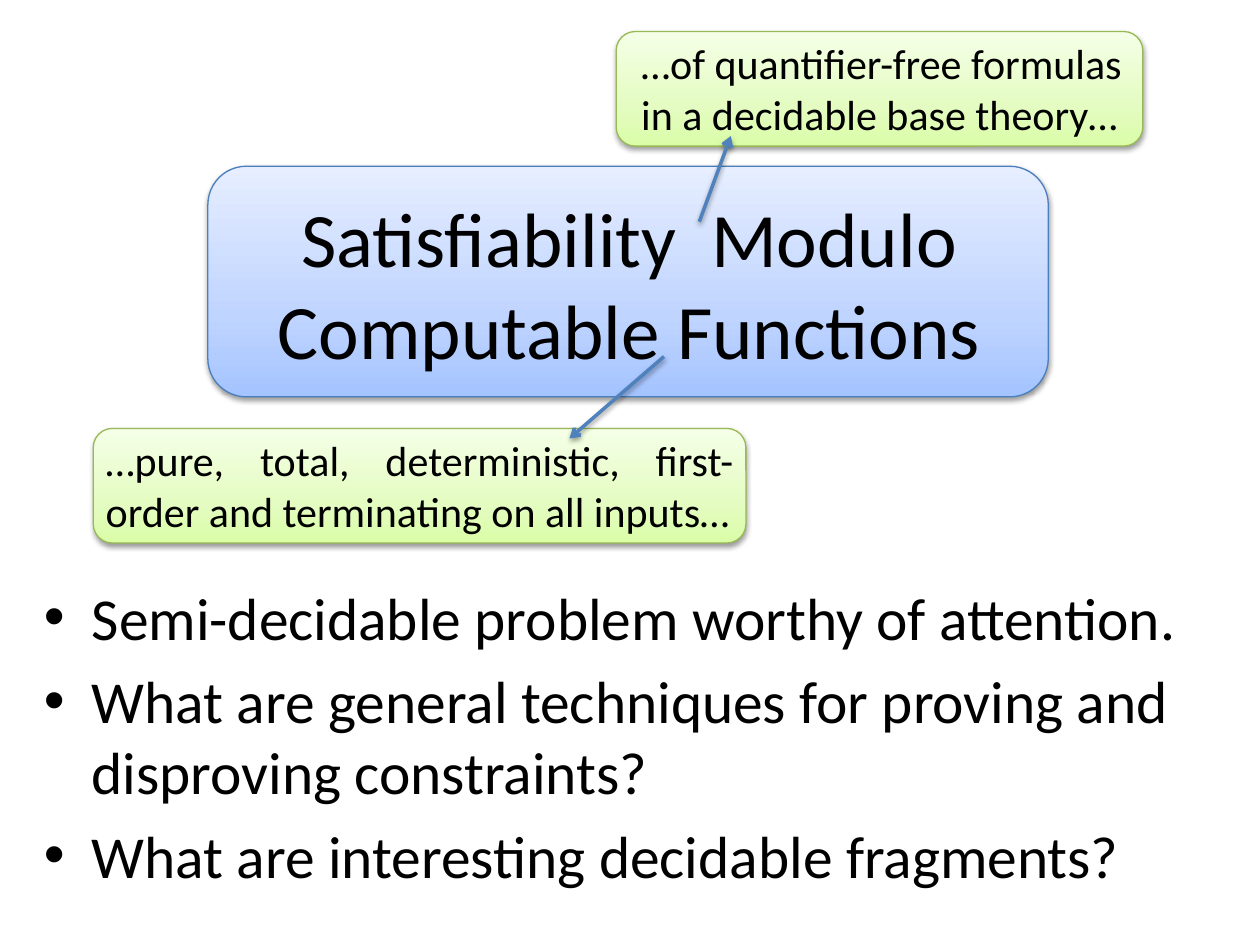
"""Build a slide on satisfiability modulo computable functions."""
from dataclasses import dataclass

from lxml import etree
from pptx import Presentation
from pptx.dml.color import RGBColor
from pptx.enum.shapes import MSO_CONNECTOR, MSO_SHAPE
from pptx.enum.text import MSO_ANCHOR, PP_ALIGN
from pptx.oxml.ns import qn
from pptx.util import Inches, Pt

ROUNDED = MSO_SHAPE.ROUNDED_RECTANGLE
STRAIGHT = MSO_CONNECTOR.STRAIGHT
TOP, MIDDLE = MSO_ANCHOR.TOP, MSO_ANCHOR.MIDDLE
LEFT, CENTER, JUSTIFY = PP_ALIGN.LEFT, PP_ALIGN.CENTER, PP_ALIGN.JUSTIFY

BLACK = RGBColor(0x00, 0x00, 0x00)
BLUE_EDGE = RGBColor(0x4B, 0x7E, 0xBC)
GREEN_EDGE = RGBColor(0x98, 0xB9, 0x55)
ARROW_BLUE = RGBColor(0x4F, 0x81, 0xBD)
BLUE_STOPS = tuple(map(RGBColor.from_string, ("A4C4FF", "BFD4FF", "E6EEFF")))
GREEN_STOPS = tuple(map(RGBColor.from_string, ("DAFDA7", "E4FCC2", "F5FFE7")))
STOP_POSITIONS = (0, 35, 100)
BULLET_INDENT = 0.38


@dataclass(frozen=True)
class Box:
    """Position and size in inches."""

    left: float
    top: float
    width: float
    height: float

    def lengths(self) -> tuple:
        """Return the four measures as lengths."""
        return tuple(map(Inches, (self.left, self.top, self.width, self.height)))


@dataclass(frozen=True)
class Callout:
    """A green remark with an arrow that leads to it."""

    panel: Box
    text_box: Box
    text: str
    alignment: PP_ALIGN
    arrow_start: tuple[float, float]
    arrow_end: tuple[float, float]


TITLE = "Satisfiability  Modulo\vComputable Functions"
CALLOUTS = (
    Callout(Box(4.89, 0.25, 4.18, 0.91), Box(4.99, 0.25, 4.08, 0.91),
            "…of quantifier-free formulas in a decidable base theory…",
            LEFT, (5.55, 1.76), (5.8, 1.08)),
    Callout(Box(0.74, 3.4, 5.18, 0.91), Box(0.74, 3.4, 5.18, 0.91),
            "…pure, total, deterministic, first-order and terminating on all inputs…",
            JUSTIFY, (5.27, 2.83), (4.52, 3.48)),
)
QUESTIONS = (
    "Semi-decidable problem worthy of attention.",
    "What are general techniques for proving and disproving constraints?",
    "What are interesting decidable fragments?",
)


def add_child(parent, tag: str, **attributes: str):
    """Append a DrawingML element and return it."""
    return etree.SubElement(parent, qn(f"a:{tag}"), attributes)


def add_shadow(shape) -> None:
    """Give a shape a soft shadow straight below it."""
    effects = add_child(shape._element.spPr, "effectLst")
    shadow = add_child(effects, "outerShdw", blurRad=str(Pt(3.1)), dist=str(Pt(1.6)),
                       dir="5400000", rotWithShape="0")
    color = add_child(shadow, "srgbClr", val=str(BLACK))
    add_child(color, "alpha", val="38000")


def add_panel(shapes, box: Box, stops: tuple, edge: RGBColor) -> None:
    """Draw a rounded panel with a gradient that lightens upwards."""
    panel = shapes.add_shape(ROUNDED, *box.lengths())
    gradient = add_child(panel._element.spPr, "gradFill", rotWithShape="1")
    stop_list = add_child(gradient, "gsLst")
    for position, color in zip(STOP_POSITIONS, stops):
        stop = add_child(stop_list, "gs", pos=str(position * 1000))
        add_child(stop, "srgbClr", val=str(color))
    add_child(gradient, "lin", ang="16200000", scaled="0")
    panel.line.color.rgb = edge
    panel.line.width = Pt(0.75)
    add_shadow(panel)


def add_text(shapes, box: Box, lines: tuple[str, ...], size: float,
             alignment: PP_ALIGN = LEFT, anchor: MSO_ANCHOR = TOP):
    """Write one paragraph per line and return the text frame."""
    frame = shapes.add_textbox(*box.lengths()).text_frame
    frame.word_wrap = True
    frame.vertical_anchor = anchor
    font_format = {"name": "Calibri", "size": Pt(size)}
    for index, line in enumerate(lines):
        paragraph = frame.add_paragraph() if index else frame.paragraphs[0]
        paragraph.text = line
        paragraph.alignment = alignment
        for run in paragraph.runs:
            for name, value in font_format.items():
                setattr(run.font, name, value)
            run.font.color.rgb = BLACK
    return frame


def add_bullets(frame, space_before: float) -> None:
    """Turn every paragraph into a bullet with a hanging indent."""
    indent = Inches(BULLET_INDENT)
    for paragraph in frame.paragraphs:
        paragraph.space_before = Pt(space_before)
        properties = paragraph._p.get_or_add_pPr()
        properties.set("marL", str(indent))
        properties.set("indent", str(-indent))
        add_child(properties, "buFont", typeface="Arial")
        add_child(properties, "buChar", char="•")


def add_arrow(shapes, start: tuple[float, float], end: tuple[float, float]) -> None:
    """Draw a straight arrow between two points."""
    arrow = shapes.add_connector(STRAIGHT, *map(Inches, start + end))
    arrow.line.color.rgb = ARROW_BLUE
    arrow.line.width = Pt(2)
    add_child(arrow.line._get_or_add_ln(), "tailEnd", type="arrow")
    add_shadow(arrow)


def add_callout(shapes, callout: Callout) -> None:
    """Draw a callout as one group."""
    members = shapes.add_group_shape().shapes
    add_panel(members, callout.panel, GREEN_STOPS, GREEN_EDGE)
    add_text(members, callout.text_box, (callout.text,), 24, callout.alignment)
    add_arrow(members, callout.arrow_start, callout.arrow_end)


def main() -> None:
    """Build and save the presentation."""
    presentation = Presentation()
    presentation.slide_width = Inches(10)
    presentation.slide_height = Inches(7.5)
    shapes = presentation.slides.add_slide(presentation.slide_layouts[6]).shapes
    add_panel(shapes, Box(1.65, 1.32, 6.67, 1.83), BLUE_STOPS, BLUE_EDGE)
    add_text(shapes, Box(1.81, 1.32, 6.37, 1.85), (TITLE,), 44, CENTER, MIDDLE)
    for callout in CALLOUTS:
        add_callout(shapes, callout)
    questions = add_text(shapes, Box(0.25, 4.56, 9.5, 2.77), QUESTIONS, 34)
    add_bullets(questions, 6.8)
    presentation.save("out.pptx")


if __name__ == "__main__":
    main()
